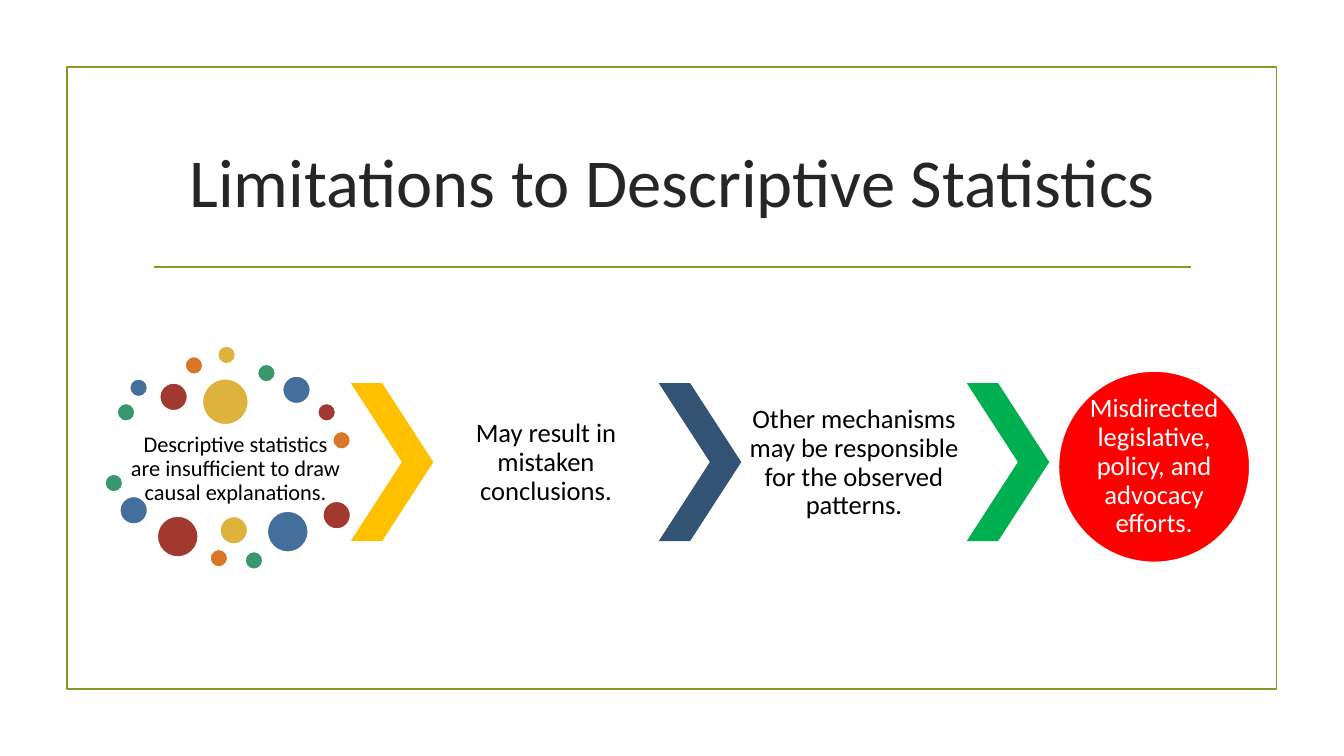
from dataclasses import dataclass
from typing import NamedTuple, Optional

from lxml import etree
from pptx import Presentation
from pptx.dml.color import RGBColor
from pptx.enum import shapes, text
from pptx.oxml import ns
from pptx.util import Pt


@dataclass(frozen=True)
class Theme:
    font: str = "Calibri"
    head: float = 49
    body: float = 19
    small: float = 16
    rule: float = 1.25
    olive: str = "83992A"
    ink: str = "262626"
    black: str = "000000"
    white: str = "FFFFFF"
    red: str = "FF0000"
    dots: tuple = ("39976D", "446E9C", "A23930", "D77727", "DDB33E")
    arrows: tuple = ("FFC000", "335375", "00B050")


class Box(NamedTuple):
    x: float
    y: float
    w: float
    h: float


class Dot(NamedTuple):
    x: float
    y: float
    size: float


class Note(NamedTuple):
    box: Box
    lines: tuple
    size: float
    inset: float


look = Theme()

# Dots: their colours cycle through look.dots
TINY, MID, LARGE, HUGE = 13, 20, 29.5, 33
DOTS = (
    Dot(83.5, 288, TINY), Dot(92.5, 270.5, TINY), Dot(114, 273.5, MID),
    Dot(132, 254.5, TINY), Dot(155.3, 247, TINY), Dot(183.8, 260, TINY),
    Dot(201.8, 268.5, MID), Dot(226.8, 288, TINY), Dot(237.5, 308, TINY),
    Dot(144.5, 270.5, HUGE), Dot(74.8, 338.5, TINY), Dot(85.5, 354.5, MID),
    Dot(112.2, 368.5, LARGE), Dot(149.8, 392.2, TINY), Dot(157, 368.8, MID),
    Dot(174.9, 393.8, TINY), Dot(190.8, 365, LARGE), Dot(230.5, 358, MID),
)

# Chevrons and the text to the right of each, at one step
START, STEP, TOP = 250.5, 220, 273.6
WIDE, TALL, SPAN = 59, 113, 161
NOTES = (
    Note(Box(87.8, 306, SPAN, 58.3),
         ("Descriptive statistics", "are insufficient to draw causal explanations."),
         look.small, 1.4),
    Note(Box(START + WIDE, TOP + 0.7, SPAN, TALL),
         ("May result in mistaken conclusions.",), look.body, 2),
    Note(Box(START + STEP + WIDE, TOP + 0.7, SPAN, TALL),
         ("Other mechanisms may be responsible for the observed patterns.",),
         look.body, 2),
)


def tint(code: str) -> RGBColor:
    return RGBColor.from_string(code)


def draw(slide, kind, box: Box, fill: Optional[str], line: Optional[str]):
    item = slide.shapes.add_shape(kind, *map(Pt, box))
    item.shadow.inherit = False
    if fill:
        item.fill.solid()
        item.fill.fore_color.rgb = tint(fill)
    else:
        item.fill.background()
    if line:
        item.line.color.rgb = tint(line)
        item.line.width = Pt(look.rule)
    else:
        item.line.fill.background()
    return item


def write(item, lines: tuple, size: float, color: str, inset: float,
          pitch: float = 0.9) -> None:
    frame = item.text_frame
    frame.word_wrap = True
    frame.auto_size = text.MSO_AUTO_SIZE.NONE
    frame.vertical_anchor = text.MSO_ANCHOR.MIDDLE
    frame.margin_left = frame.margin_right = Pt(inset)
    frame.margin_top = frame.margin_bottom = Pt(inset)
    para = frame.paragraphs[0]
    para.alignment = text.PP_ALIGN.CENTER
    para.line_spacing = pitch
    for i, line in enumerate(lines):
        if i:
            para.add_line_break()
        run = para.add_run()
        run.text = line
        run.font.name = look.font
        run.font.size = Pt(size)
        run.font.color.rgb = tint(color)


def main() -> None:
    deck = Presentation()
    deck.slide_width, deck.slide_height = Pt(960), Pt(540)
    slide = deck.slides.add_slide(deck.slide_layouts[5])
    oval = shapes.MSO_SHAPE.OVAL

    # Frame, rule and title
    draw(slide, shapes.MSO_SHAPE.RECTANGLE, Box(47.8, 48, 864, 444),
         None, look.olive)
    rule = slide.shapes.add_connector(
        shapes.MSO_CONNECTOR.STRAIGHT, Pt(110), Pt(190.8), Pt(850.5), Pt(190.8))
    rule.line.color.rgb = tint(look.olive)
    rule.line.width = Pt(look.rule)
    etree.SubElement(rule._element.spPr, ns.qn("a:effectLst"))
    title = slide.shapes.title
    title.left, title.top = Pt(102), Pt(77)
    title.width, title.height = Pt(756), Pt(103)
    write(title, ("Limitations to Descriptive Statistics",),
          look.head, look.ink, 3.6, 1.0)

    # Texts
    for note in NOTES:
        item = slide.shapes.add_textbox(*map(Pt, note.box))
        write(item, note.lines, note.size, look.black, note.inset)

    # Ring of dots
    for i, dot in enumerate(DOTS):
        draw(slide, oval, Box(dot.x, dot.y, dot.size, dot.size),
             look.dots[i % len(look.dots)], look.white)

    # Chevrons
    for i, fill in enumerate(look.arrows):
        arrow = draw(slide, shapes.MSO_SHAPE.CHEVRON,
                     Box(START + i * STEP, TOP, WIDE, TALL), fill, None)
        arrow.adjustments[0] = 0.62

    # Outcome
    end = draw(slide, oval, Box(756, 265, 136.8, 136.8), look.red, look.white)
    write(end, ("Misdirected legislative, policy, and advocacy efforts.",),
          look.body, look.white, 0)

    deck.save("out.pptx")


if __name__ == "__main__":
    main()
